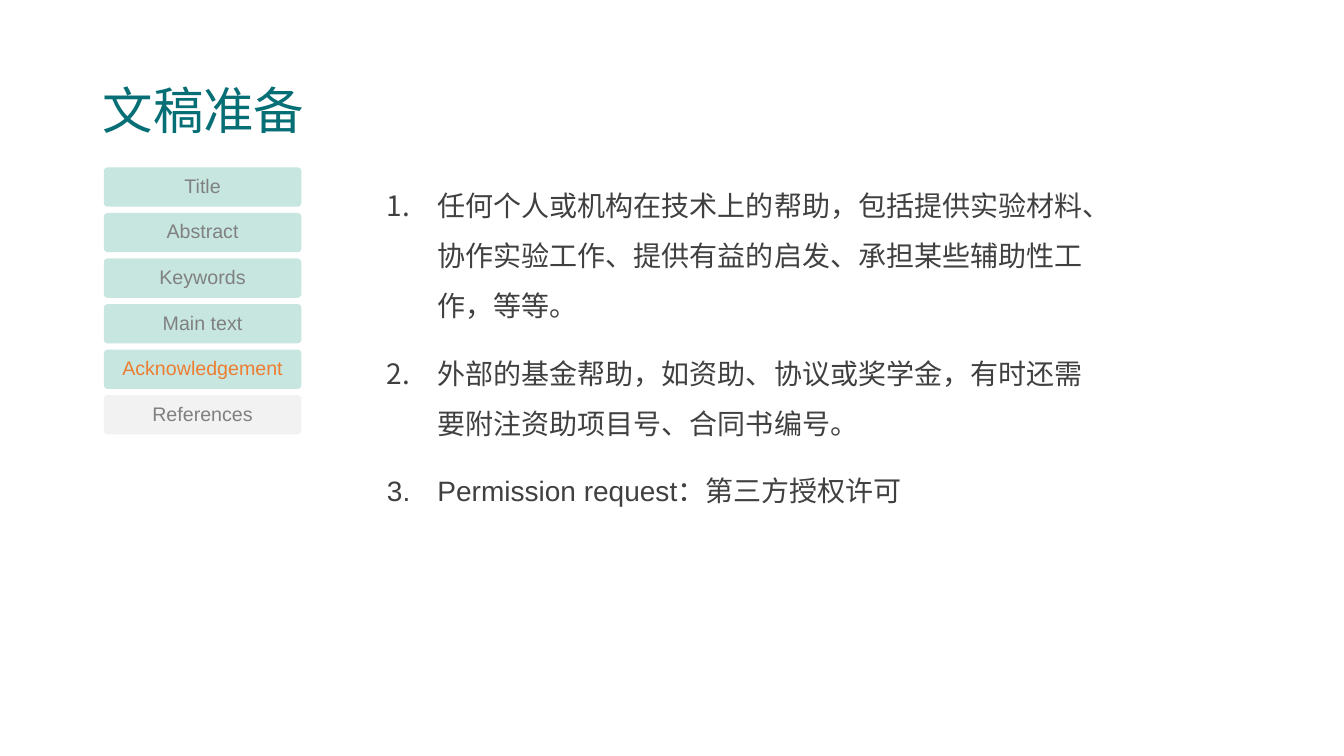
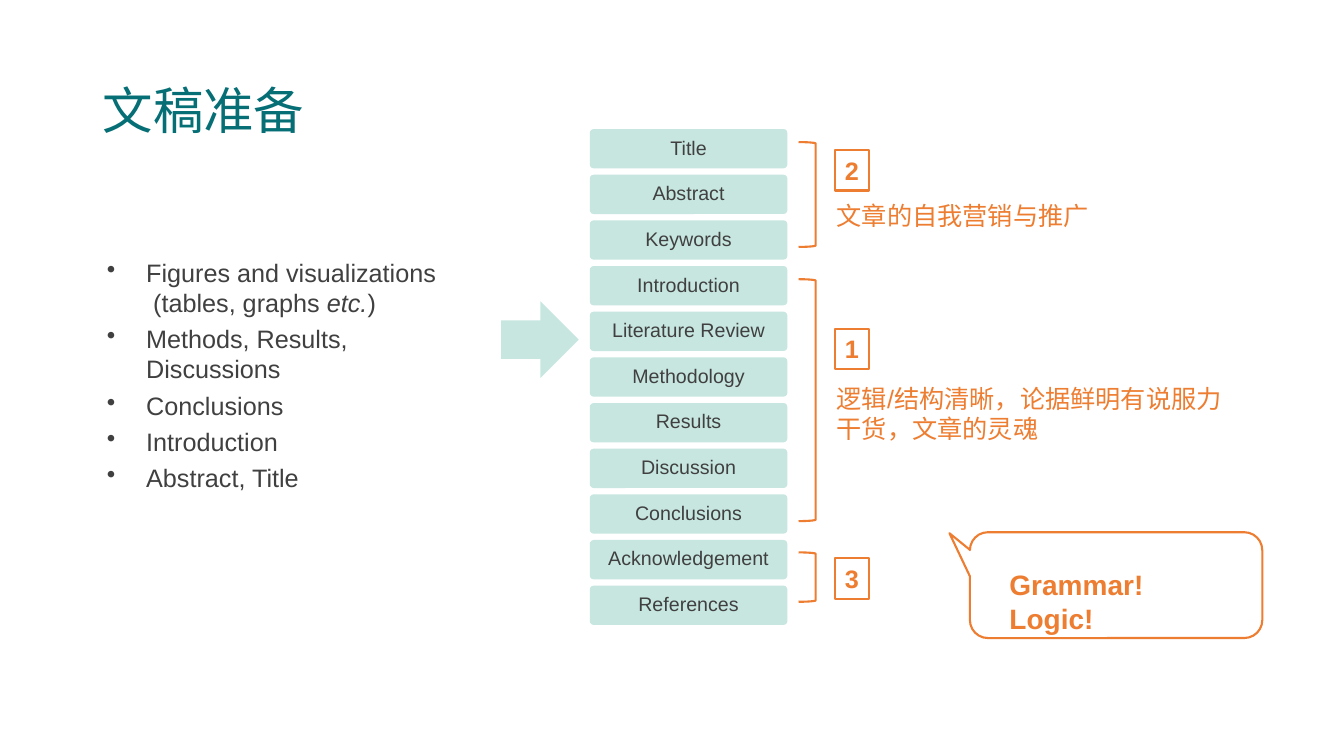
from dataclasses import dataclass

from lxml import etree
from pptx import Presentation
from pptx.dml import color
from pptx.enum import shapes, text
from pptx.oxml import ns
from pptx.util import Inches, Pt

SHAPE = shapes.MSO_SHAPE
ANCHOR = text.MSO_ANCHOR
ALIGN = text.PP_ALIGN


@dataclass(frozen=True)
class Theme:
    font: str = "Arial"
    teal: str = "066E75"
    mint: str = "C7E6E0"
    pale: str = "F2F2F2"
    dark: str = "404040"
    muted: str = "808080"
    orange: str = "ED7D31"
    title_size: int = 36
    body_size: int = 20
    note_size: int = 18
    label_size: int = 14
    outline: float = 1.5


THEME = Theme()
TITLE = "文稿准备"
SECTION_WIDTH, SECTION_HEIGHT = 1.96, 0.39


def rgb(value):
    return color.RGBColor.from_string(value)


def style(paragraph, size, ink, bold=False):
    font = paragraph.font
    font.name = THEME.font
    font.size = Pt(size)
    font.color.rgb = rgb(ink)
    font.bold = bold


def set_frame(frame, anchor=ANCHOR.TOP, insets=(0.1, 0.05, 0.1, 0.05)):
    frame.word_wrap = True
    frame.vertical_anchor = anchor
    (frame.margin_left, frame.margin_top,
     frame.margin_right, frame.margin_bottom) = map(Inches, insets)


def write(frame, lines, size, ink, bold=False, align=ALIGN.LEFT):
    frame.text = "\n".join(lines)
    for paragraph in frame.paragraphs:
        paragraph.alignment = align
        style(paragraph, size, ink, bold)
    return frame.paragraphs


def add_text(slide, box, lines, size, ink, **frame_options):
    frame = slide.shapes.add_textbox(*map(Inches, box)).text_frame
    set_frame(frame, **frame_options)
    return write(frame, lines, size, ink)


def add_figure(slide, kind, box, fill=None, line=None):
    figure = slide.shapes.add_shape(kind, *map(Inches, box))
    figure.shadow.inherit = False
    if fill:
        figure.fill.solid()
        figure.fill.fore_color.rgb = rgb(fill)
    else:
        figure.fill.background()
    if line:
        figure.line.color.rgb = rgb(line)
        figure.line.width = Pt(THEME.outline)
    else:
        figure.line.fill.background()
    return figure


def add_bullet(paragraph, indent, tag, **attributes):
    properties = paragraph._p.get_or_add_pPr()
    properties.set("marL", str(Inches(indent)))
    properties.set("indent", str(-Inches(indent)))
    bullet = etree.Element(ns.qn(tag), attributes)
    later = properties.find(ns.qn("a:defRPr"))
    if later is None:
        properties.append(bullet)
    else:
        later.addprevious(bullet)


def add_title(slide):
    title, = add_text(slide, (0.92, 0.4, 11.5, 1.45), [TITLE],
                      THEME.title_size, THEME.teal, anchor=ANCHOR.MIDDLE)
    title.line_spacing = 0.9


def add_section(slide, left, top, label, fill, ink):
    section = add_figure(slide, SHAPE.ROUNDED_RECTANGLE,
                         (left, top, SECTION_WIDTH, SECTION_HEIGHT), fill)
    section.adjustments[0] = 0.1
    frame = section.text_frame
    set_frame(frame, ANCHOR.MIDDLE, (0.02,) * 4)
    name, = write(frame, [label], THEME.label_size, ink, align=ALIGN.CENTER)
    name.line_spacing = 0.9
    name.space_after = Pt(5)


def add_sections(slide, left, first_top, last_top, labels, ink, accents=None):
    pitch = (last_top - first_top) / (len(labels) - 1)
    for row, label in enumerate(labels):
        fill, label_ink = (accents or {}).get(label, (THEME.mint, ink))
        add_section(slide, left, first_top + row * pitch, label, fill, label_ink)


def add_stage(slide, number, bracket_top, bracket_height, number_top):
    add_figure(slide, SHAPE.RIGHT_BRACKET,
               (7.92, bracket_top, 0.17, bracket_height), line=THEME.orange)
    badge = add_figure(slide, SHAPE.RECTANGLE, (8.28, number_top, 0.34, 0.4),
                       line=THEME.orange)
    set_frame(badge.text_frame, ANCHOR.MIDDLE, (0,) * 4)
    write(badge.text_frame, [number], THEME.note_size, THEME.orange,
          bold=True, align=ALIGN.CENTER)


def add_callout(slide, message):
    callout = add_figure(slide, SHAPE.ROUNDED_RECTANGULAR_CALLOUT,
                         (9.62, 5.28, 2.9, 1.05), line=THEME.orange)
    for index, value in enumerate((-0.57, -0.49, 0.17)):
        callout.adjustments[index] = value
    set_frame(callout.text_frame, insets=(0.34, 0.3, 0.1, 0))
    write(callout.text_frame, [message], THEME.body_size, THEME.orange, bold=True)


def build_acknowledgement(slide):
    add_title(slide)
    items = add_text(slide, (3.74, 1.65, 7.3, 3.8), [
        "任何个人或机构在技术上的帮助，包括提供实验材料、协作实验工作、"
        "提供有益的启发、承担某些辅助性工作，等等。",
        "外部的基金帮助，如资助、协议或奖学金，有时还需要附注资助项目号、合同书编号。",
        "Permission request：第三方授权许可",
    ], THEME.body_size, THEME.dark)
    for item in items:
        add_bullet(item, 0.5, "a:buAutoNum", type="arabicPeriod")
        item.line_spacing = 1.5
        item.space_after = Pt(12)
    add_sections(slide, 1.03, 1.66, 3.92,
                 ["Title", "Abstract", "Keywords", "Main text",
                  "Acknowledgement", "References"],
                 THEME.muted,
                 {"Acknowledgement": (THEME.mint, THEME.orange),
                  "References": (THEME.pale, THEME.muted)})


def build_writing_order(slide):
    add_title(slide)
    steps = add_text(slide, (1.06, 2.55, 3.8, 2.06), [
        "Figures and visualizations\v (tables, graphs ",
        "Methods, Results,\vDiscussions",
        "Conclusions",
        "Introduction",
        "Abstract, Title",
    ], THEME.note_size, THEME.dark, insets=(0,) * 4)
    for position, step in enumerate(steps):
        add_bullet(step, 0.39, "a:buChar", char="•")
        if position:
            step.space_before = Pt(4.3)
    et_cetera = steps[0].add_run()
    et_cetera.text = "etc."
    et_cetera.font.italic = True
    steps[0].add_run().text = ")"

    add_figure(slide, SHAPE.RIGHT_ARROW, (4.97, 2.99, 0.77, 0.76), THEME.mint)
    add_sections(slide, 5.85, 1.28, 5.81,
                 ["Title", "Abstract", "Keywords", "Introduction",
                  "Literature Review", "Methodology", "Results", "Discussion",
                  "Conclusions", "Acknowledgement", "References"],
                 THEME.dark)
    for stage in (("2", 1.41, 1.04, 1.49),
                  ("1", 2.77, 2.4, 3.26),
                  ("3", 5.48, 0.49, 5.54)):
        add_stage(slide, *stage)
    add_text(slide, (8.2, 1.94, 2.73, 0.4), ["文章的自我营销与推广"],
             THEME.note_size, THEME.orange)
    add_text(slide, (8.2, 3.75, 4.08, 1.01),
             ["逻辑/结构清晰，论据鲜明有说服力", "干货，文章的灵魂"],
             THEME.note_size, THEME.orange)
    add_callout(slide, "Grammar!\vLogic!")


def main():
    deck = Presentation()
    deck.slide_width, deck.slide_height = Inches(13.33), Inches(7.5)
    for build in (build_acknowledgement, build_writing_order):
        build(deck.slides.add_slide(deck.slide_layouts[6]))
    deck.save("out.pptx")


if __name__ == "__main__":
    main()
